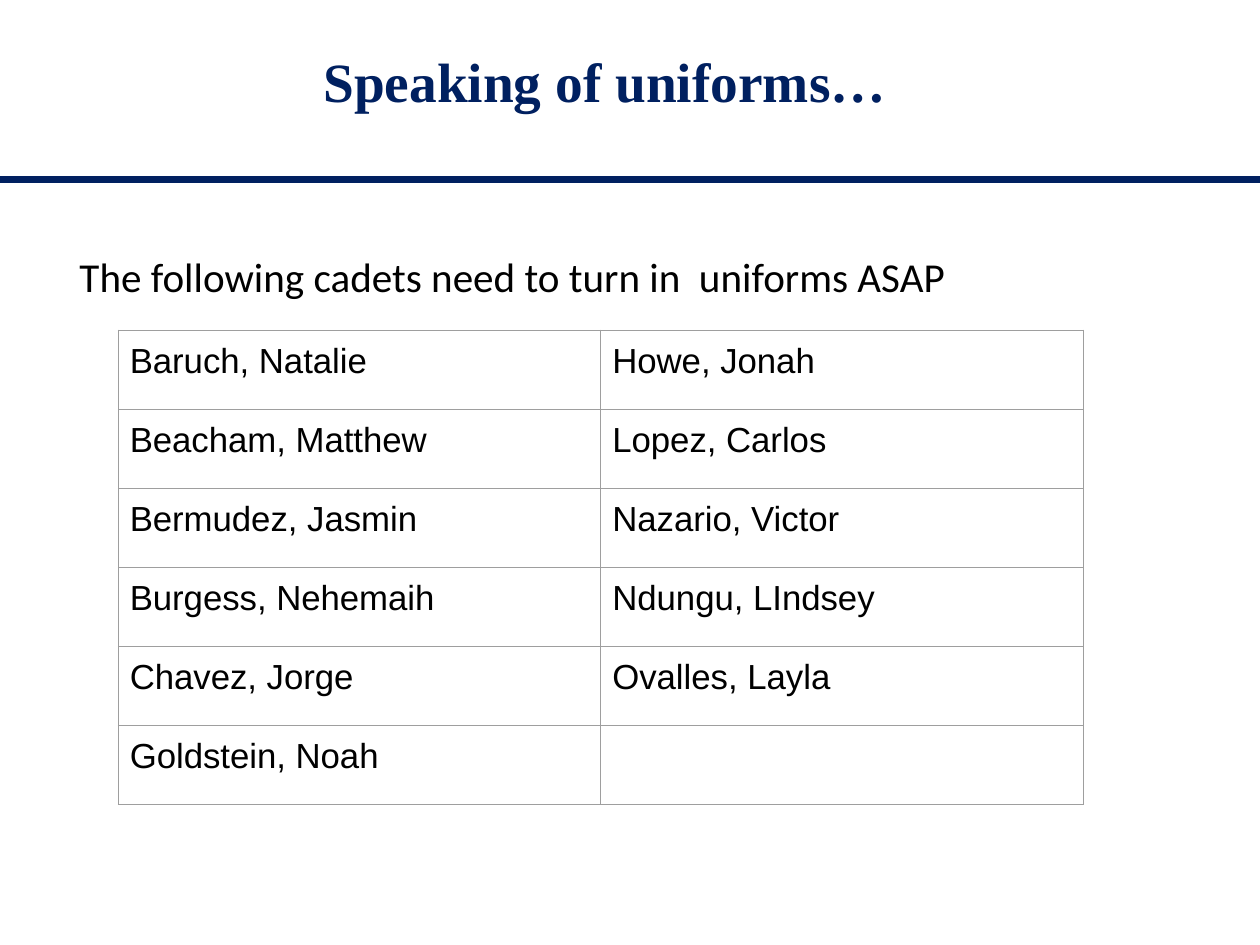
from dataclasses import dataclass

from lxml import etree
from pptx import Presentation
from pptx import util as u
from pptx.dml import color
from pptx.enum import shapes, text
from pptx.oxml import ns

COLORS = {"navy": "002060", "black": "000000", "border": "9E9E9E"}
CADETS = [
    ("Baruch, Natalie", "Howe, Jonah"),
    ("Beacham, Matthew", "Lopez, Carlos"),
    ("Bermudez, Jasmin", "Nazario, Victor"),
    ("Burgess, Nehemaih", "Ndungu, LIndsey"),
    ("Chavez, Jorge", "Ovalles, Layla"),
    ("Goldstein, Noah", ""),
]
COLUMN_WIDTH, ROW_HEIGHT = 4.24, 0.695


@dataclass
class TextBlock:
    left: float
    top: float
    width: float
    height: float
    words: str
    font: str
    size: float
    color: str
    bold: bool = False
    align: text.PP_ALIGN = text.PP_ALIGN.LEFT
    anchor: text.MSO_ANCHOR = text.MSO_ANCHOR.TOP
    inset: float = 0.1
    spacing: float = 1.0


BLOCKS = [
    TextBlock(0.16, 0.18, 10.31, 1.13, "Speaking of uniforms…", "Times New Roman", 35, "navy",
              bold=True, align=text.PP_ALIGN.CENTER, anchor=text.MSO_ANCHOR.MIDDLE,
              inset=0.05, spacing=0.9),
    TextBlock(0.6, 2.11, 9.99, 0.64, "The following cadets need to turn in  uniforms ASAP",
              "Calibri", 26, "black"),
]


def rgb(name: str) -> color.RGBColor:
    return color.RGBColor.from_string(COLORS[name])


def write_text(frame, words: str, *, font: str, size: float, color_name: str,
               bold: bool = False, align=text.PP_ALIGN.LEFT, spacing: float = 1.0) -> None:
    paragraph = frame.paragraphs[0]
    paragraph.alignment = align
    paragraph.line_spacing = spacing
    paragraph.font.size = u.Pt(size)
    if words:
        run = paragraph.add_run()
        run.text = words
        run.font.name = font
        run.font.size = u.Pt(size)
        run.font.bold = bold
        run.font.color.rgb = rgb(color_name)


def add_text_block(slide, block: TextBlock) -> None:
    shape = slide.shapes.add_textbox(u.Inches(block.left), u.Inches(block.top),
                                     u.Inches(block.width), u.Inches(block.height))
    frame = shape.text_frame
    frame.word_wrap = True
    frame.vertical_anchor = block.anchor
    frame.margin_left = frame.margin_right = u.Inches(0.1)
    frame.margin_top = frame.margin_bottom = u.Inches(block.inset)
    write_text(frame, block.words, font=block.font, size=block.size, color_name=block.color,
               bold=block.bold, align=block.align, spacing=block.spacing)


def add_header_rule(slide) -> None:
    rule = slide.shapes.add_connector(shapes.MSO_CONNECTOR.STRAIGHT, u.Inches(0), u.Inches(1.58),
                                      u.Inches(11.09), u.Inches(1.58))
    rule.line.color.rgb = rgb("navy")
    rule.line.width = u.Pt(4.5)
    etree.SubElement(rule.element.spPr, ns.qn("a:effectLst"))


def add_cell_borders(cell) -> None:
    properties = cell._tc.get_or_add_tcPr()
    for index, side in enumerate(("lnL", "lnR", "lnT", "lnB")):
        border = etree.Element(ns.qn(f"a:{side}"), w=str(u.Pt(0.75)))
        fill = etree.SubElement(border, ns.qn("a:solidFill"))
        etree.SubElement(fill, ns.qn("a:srgbClr"), val=COLORS["border"])
        properties.insert(index, border)


def add_cadet_table(slide) -> None:
    row_count, column_count = len(CADETS), len(CADETS[0])
    table = slide.shapes.add_table(row_count, column_count, u.Inches(1.04), u.Inches(2.9),
                                   u.Inches(COLUMN_WIDTH * column_count),
                                   u.Inches(ROW_HEIGHT * row_count)).table
    table.first_row = table.horz_banding = False
    for column in table.columns:
        column.width = u.Inches(COLUMN_WIDTH)
    for row, names in zip(table.rows, CADETS):
        row.height = u.Inches(ROW_HEIGHT)
        for cell, name in zip(row.cells, names):
            cell.fill.background()
            cell.margin_left = cell.margin_right = u.Inches(0.1)
            cell.margin_top = cell.margin_bottom = u.Inches(0.1)
            write_text(cell.text_frame, name, font="Arial", size=22, color_name="black")
            add_cell_borders(cell)


def main() -> None:
    presentation = Presentation()
    presentation.slide_width = u.Inches(11.07)
    presentation.slide_height = u.Inches(8.3)
    slide = presentation.slides.add_slide(presentation.slide_layouts[6])
    add_header_rule(slide)
    for block in BLOCKS:
        add_text_block(slide, block)
    add_cadet_table(slide)
    presentation.save("out.pptx")


if __name__ == "__main__":
    main()
